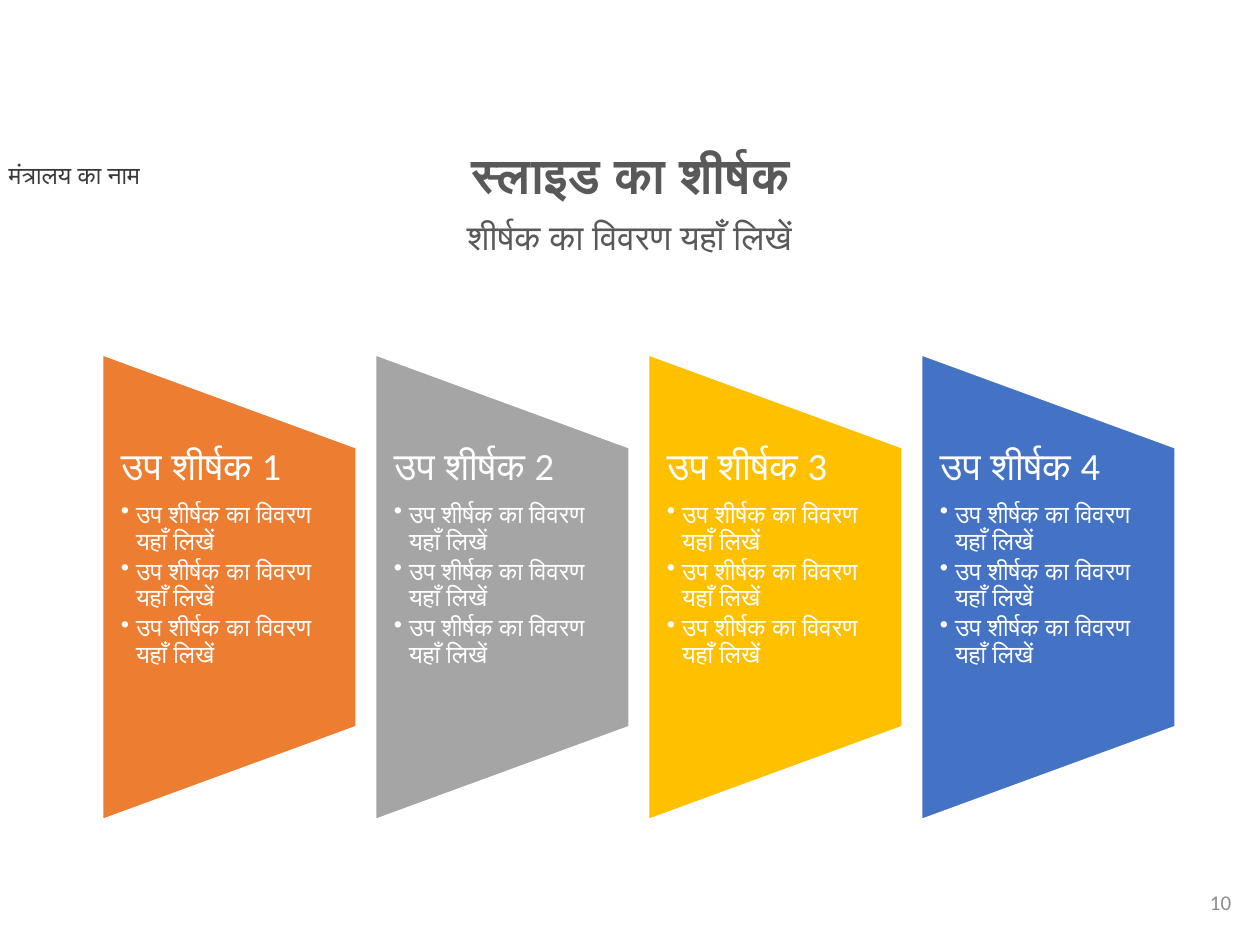
from dataclasses import dataclass

from lxml import etree
from pptx import Presentation, util as u
from pptx.dml.color import RGBColor
from pptx.enum import shapes, text
from pptx.oxml.ns import qn

FONT = "Calibri"
WHITE = RGBColor(0xFF, 0xFF, 0xFF)
DARK = RGBColor(0x3B, 0x38, 0x38)
GRAY = RGBColor(0x59, 0x59, 0x59)
PALE = RGBColor(0x8C, 0x8C, 0x8C)
ORANGE = RGBColor(0xED, 0x7D, 0x31)
SILVER = RGBColor(0xA5, 0xA5, 0xA5)
GOLD = RGBColor(0xFF, 0xC0, 0x00)
BLUE = RGBColor(0x44, 0x72, 0xC4)

DETAIL = "उप शीर्षक का विवरण यहाँ लिखें"
LEFT, PITCH = 0.81, 6.5 / 3
WIDE, TALL, MID = 2.02, 3.7, 4.66


@dataclass
class Style:
    size: float
    color: RGBColor
    bold: bool = False
    align: text.PP_ALIGN = text.PP_ALIGN.LEFT
    line: float = 1.0
    after: float = 0
    mark: str = ""


@dataclass
class Panel:
    head: str
    color: RGBColor


HEAD = Style(22, WHITE, line=0.9, after=7.7)
ITEM = Style(14, WHITE, line=0.9, after=2.1, mark="•")
CENTER = text.PP_ALIGN.CENTER
PANELS = [
    Panel("उप शीर्षक 1", ORANGE),
    Panel("उप शीर्षक 2", SILVER),
    Panel("उप शीर्षक 3", GOLD),
    Panel("उप शीर्षक 4", BLUE),
]


def place(shape, left: float, top: float, width: float, height: float) -> None:
    shape.left, shape.top = u.Inches(left), u.Inches(top)
    shape.width, shape.height = u.Inches(width), u.Inches(height)


def write(para, words: str, style: Style) -> None:
    """Format a paragraph and add its run."""
    para.alignment = style.align
    para.line_spacing = style.line
    para.space_before = u.Pt(0)
    para.space_after = u.Pt(style.after)
    props = para._p.get_or_add_pPr()
    hang = u.Inches(0.12) if style.mark else 0
    props.set("marL", str(hang))
    props.set("indent", str(-hang))
    if style.mark:
        etree.SubElement(props, qn("a:buChar")).set("char", style.mark)
    else:
        etree.SubElement(props, qn("a:buNone"))
    run = para.add_run()
    run.text = words
    run.font.name = FONT
    run.font.size = u.Pt(style.size)
    run.font.bold = style.bold
    run.font.color.rgb = style.color


def setup(shape, anchor=text.MSO_ANCHOR.TOP):
    """Prepare a wrapping text frame that keeps its size."""
    frame = shape.text_frame
    frame.word_wrap = True
    frame.auto_size = text.MSO_AUTO_SIZE.NONE
    frame.vertical_anchor = anchor
    return frame


def label(slide, box: tuple, words: str, style: Style, anchor=text.MSO_ANCHOR.TOP) -> None:
    shape = slide.shapes.add_textbox(*map(u.Inches, box))
    write(setup(shape, anchor).paragraphs[0], words, style)


def draw(slide, panel: Panel, left: float) -> None:
    """Draw a sideways trapezoid with its heading and bullets."""
    shape = slide.shapes.add_shape(shapes.MSO_SHAPE.FLOWCHART_MANUAL_OPERATION, 0, 0, 0, 0)
    place(shape, left + (WIDE - TALL) / 2, MID - WIDE / 2, TALL, WIDE)
    shape.rotation = 270
    shape.shadow.inherit = False
    shape.fill.solid()
    shape.fill.fore_color.rgb = panel.color
    shape.line.color.rgb = WHITE
    shape.line.width = u.Pt(1.5)

    box = slide.shapes.add_textbox(0, 0, 0, 0)
    place(box, left, 3.55, WIDE, 2.22)
    frame = setup(box)
    frame.margin_left = frame.margin_right = u.Inches(0.15)
    frame.margin_top = frame.margin_bottom = 0
    write(frame.paragraphs[0], panel.head, HEAD)
    for _ in range(3):
        para = frame.add_paragraph()
        para.level = 1
        write(para, DETAIL, ITEM)


def main() -> None:
    deck = Presentation()
    deck.slide_width, deck.slide_height = u.Inches(10), u.Inches(7.5)
    slide = deck.slides.add_slide(deck.slide_layouts[1])

    # Ministry name and page number
    label(slide, (-0.03, 1.22, 2.18, 0.34), "मंत्रालय का नाम", Style(14, DARK))
    label(slide, (7.62, 6.96, 2.25, 0.4), "10",
          Style(12, PALE, align=text.PP_ALIGN.RIGHT), text.MSO_ANCHOR.MIDDLE)

    # Title and description
    title, body = slide.shapes.title, slide.placeholders[1]
    place(title, 1.86, 1.15, 6.29, 0.47)
    write(setup(title).paragraphs[0], "स्लाइड का शीर्षक",
          Style(28, GRAY, True, CENTER, 0.9))
    place(body, 1.46, 1.7, 7.07, 0.63)
    write(setup(body).paragraphs[0], "शीर्षक का विवरण यहाँ लिखें",
          Style(20, GRAY, False, CENTER, 0.9))

    # Four panels
    for i, panel in enumerate(PANELS):
        draw(slide, panel, LEFT + i * PITCH)

    deck.save("out.pptx")


if __name__ == "__main__":
    main()
